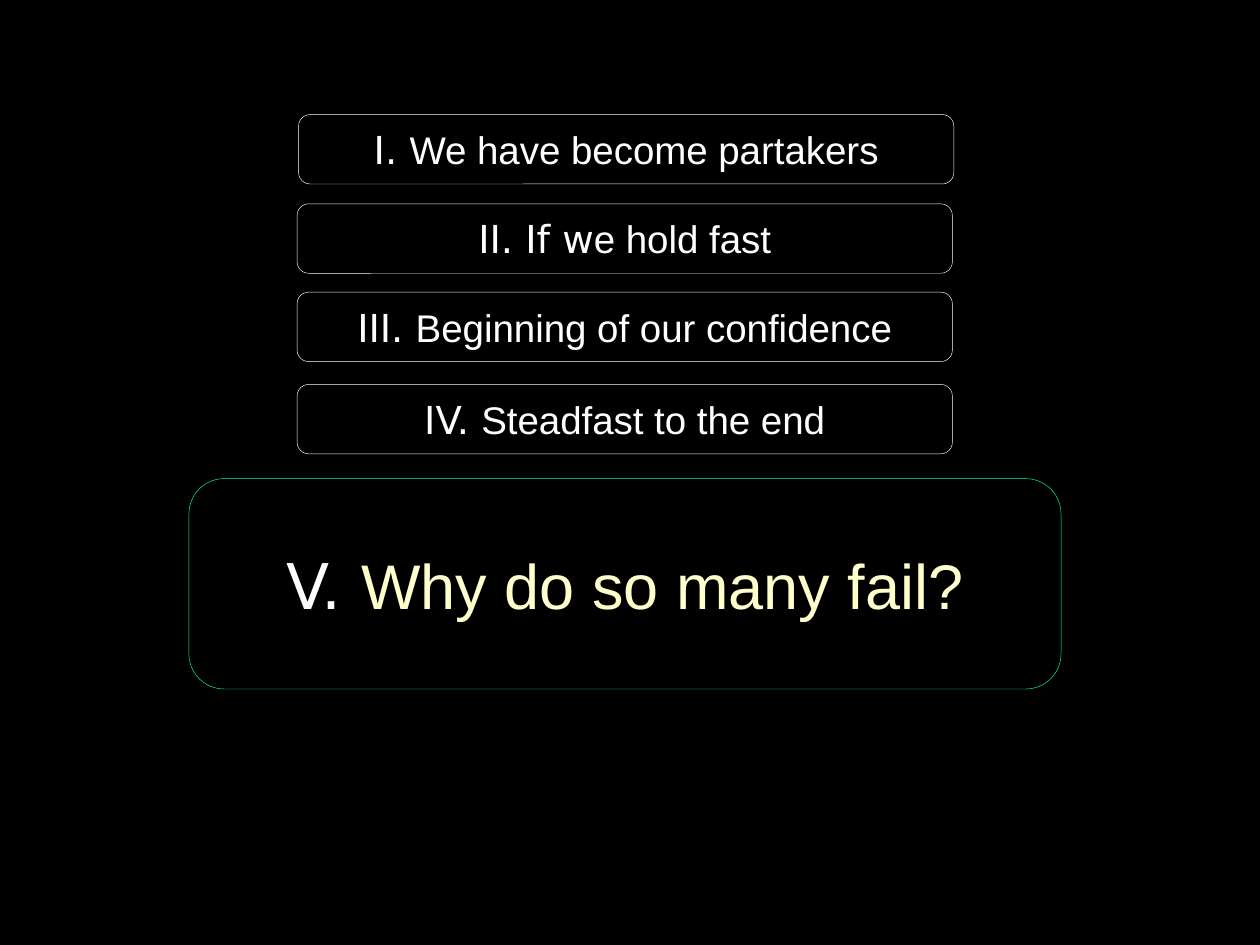
"""Build a sermon outline slide with four small points and one highlighted point."""
import pptx
import pptx.dml.color
import pptx.enum.shapes
import pptx.enum.text
import pptx.util

Cm = pptx.util.Cm
RGBColor = pptx.dml.color.RGBColor

BLACK = RGBColor(0x00, 0x00, 0x00)
WHITE = RGBColor(0xFF, 0xFF, 0xFF)
CREAM = RGBColor(0xFF, 0xFF, 0xCC)
TEAL = RGBColor(0x00, 0xFF, 0xCC)


def add_span(para, text, *, font, size, color):
    span = para.add_run()
    span.text = text
    span.font.name = font
    span.font.size = pptx.util.Pt(size)
    span.font.color.rgb = color


deck = pptx.Presentation()
deck.slide_width = Cm(25.4)
deck.slide_height = Cm(19.05)
page = deck.slides.add_slide(deck.slide_layouts[6])
page.background.fill.solid()
page.background.fill.fore_color.rgb = BLACK

small = {"width": 13.21, "height": 1.4, "size": 22, "outline": WHITE, "color": WHITE}
large = {"width": 17.58, "height": 4.24, "size": 36, "outline": TEAL, "color": CREAM}
points = [
    (6.02, 2.31, "I. ", "We have become partakers", small),
    (5.99, 4.11, "II. If w", "e hold fast", small),
    (5.99, 5.89, "III. ", "Beginning of our confidence", small),
    (5.99, 7.75, "IV. ", "Steadfast to the end", small),
    (3.81, 9.65, "V. ", "Why do so many fail?", large),
]

for left, top, lead, rest, style in points:
    box = page.shapes.add_shape(
        pptx.enum.shapes.MSO_SHAPE.ROUNDED_RECTANGLE,
        Cm(left), Cm(top), Cm(style["width"]), Cm(style["height"]),
    )
    box.shadow.inherit = False
    box.fill.solid()
    box.fill.fore_color.rgb = BLACK
    box.line.color.rgb = style["outline"]
    box.line.width = pptx.util.Pt(0.25)
    box.text_frame.vertical_anchor = pptx.enum.text.MSO_ANCHOR.MIDDLE
    para = box.text_frame.paragraphs[0]
    para.alignment = pptx.enum.text.PP_ALIGN.CENTER
    add_span(para, lead, font="DejaVu Sans", size=style["size"], color=WHITE)
    add_span(para, rest, font="Arial", size=style["size"], color=style["color"])

deck.save("out.pptx")
